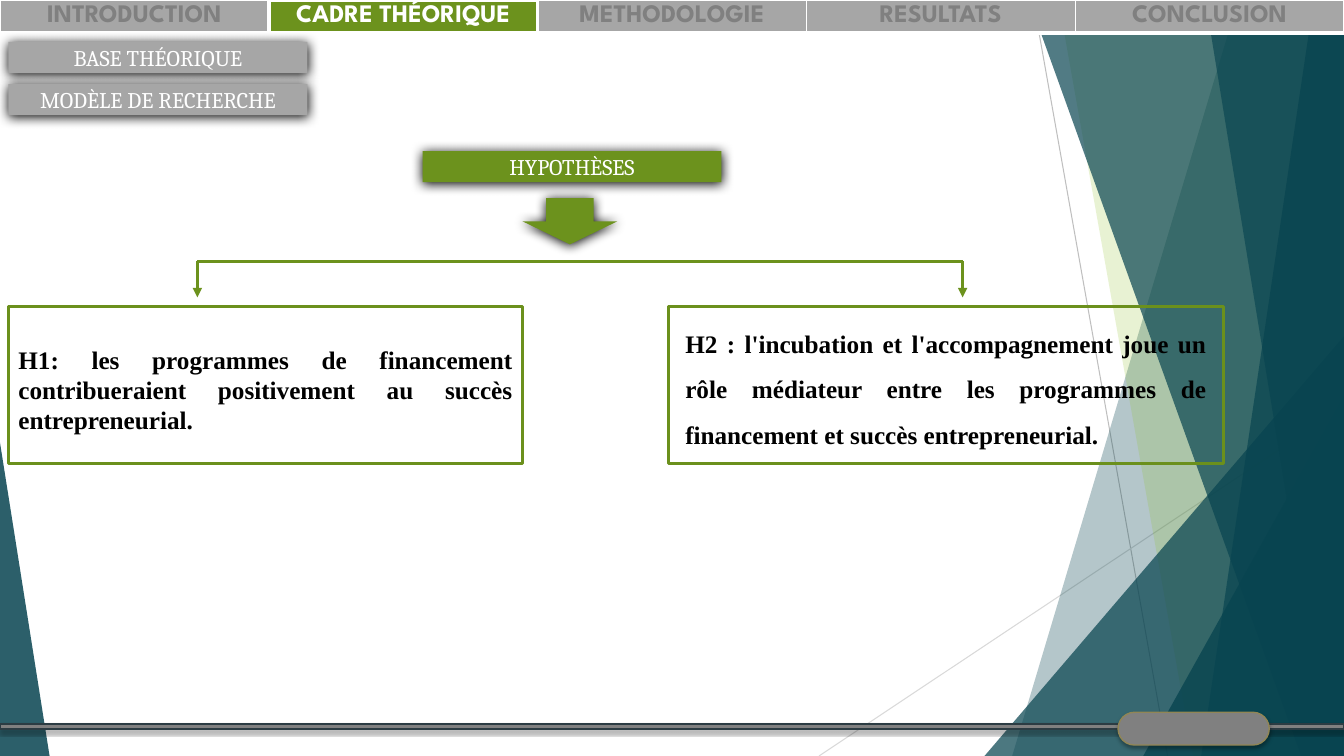
from lxml import etree
from pptx import Presentation, util as u
from pptx.dml.color import RGBColor
from pptx.enum import shapes, text
from pptx.oxml import ns

COLUMNS, ROWS = 160, 90
WIDTH, HEIGHT = u.Inches(13.33), u.Inches(7.5)
GREEN, FRAME_GREEN, GREY, DARK_GREY = "6C921D", "6B901C", "A6A6A6", "808080"
TEAL, WHITE, BLACK = "084450", "FFFFFF", "000000"
DEEP_SHADOW, SOFT_SHADOW = (100, 8.5, 1), (35, 3, 2)

HEADINGS = ["INTRODUCTION", "CADRE THÉORIQUE", "METHODOLOGIE", "RESULTATS", "CONCLUSION"]
ACTIVE_HEADING = 1
HEADING_FONT = {"name": "League Spartan", "size": u.Pt(18), "bold": True}
LABEL_FONT = {"name": "Cambria", "size": u.Pt(16), "bold": False}
HYPOTHESIS_FONT = {"name": "Times New Roman", "size": u.Pt(18), "bold": True}
CENTRED = {"alignment": text.PP_ALIGN.CENTER}
JUSTIFIED = {"alignment": text.PP_ALIGN.JUSTIFY}
SPACED = {**JUSTIFIED, "line_spacing": 1.5, "space_before": u.Pt(12), "space_after": u.Pt(12)}
LABELS = [
    ("BASE THÉORIQUE", 1, 5, GREY),
    ("MODÈLE DE RECHERCHE", 1, 10, GREY),
    ("HYPOTHÈSES", 50.3, 18, GREEN),
]
HYPOTHESES = [
    ("H1: les programmes de financement contribueraient positivement au succès entrepreneurial.",
     (1, 36.5, 61.2, 18.7), (1, 40.4, 61.2, 12.1), JUSTIFIED),
    ("H2 : l'incubation et l'accompagnement joue un rôle médiateur entre les programmes de "
     "financement et succès entrepreneurial.",
     (79.6, 36.5, 66.1, 18.7), (80.4, 36.7, 64.4, 17.5), SPACED),
]
BANDS_BEHIND = [(147.4, 120.5, TEAL, 30), (126, 142, "90C226", 20)]
BANDS_IN_FRONT = [(122.5, 154.9, TEAL, 70), (156.4, 143, TEAL, 70), (143.5, 158.2, TEAL, 65)]


def x(columns):
    return round(WIDTH * columns / COLUMNS)


def y(rows):
    return round(HEIGHT * rows / ROWS)


def box(left, top, width, height):
    return x(left), y(top), x(width), y(height)


def color(value):
    return RGBColor.from_string(value)


def assign(target, values):
    for name, value in values.items():
        setattr(target, name, value)


def child(parent, tag, **attributes):
    element = etree.SubElement(parent, ns.qn(tag))
    for name, value in attributes.items():
        element.set(name, str(value))
    return element


def paint(shape, fill=None, alpha=100, line=None, weight=1, shadow=None):
    shape.shadow.inherit = False
    if fill:
        shape.fill.solid()
        shape.fill.fore_color.rgb = color(fill)
        if alpha < 100:
            solid = shape.fill._xPr.find(ns.qn("a:solidFill"))
            child(solid[0], "a:alpha", val=alpha * 1000)
    else:
        shape.fill.background()
    if line:
        shape.line.color.rgb = color(line)
        shape.line.width = u.Pt(weight)
    else:
        shape.line.fill.background()
    if shadow:
        opacity, blur, distance = shadow
        effects = shape._element.spPr.find(ns.qn("a:effectLst"))
        outer = child(effects, "a:outerShdw", blurRad=u.Pt(blur), dist=u.Pt(distance),
                      dir=5400000, algn="ctr", rotWithShape=0)
        child(child(outer, "a:srgbClr", val=BLACK), "a:alpha", val=opacity * 1000)


def write(frame, words, font, font_color, paragraph_format):
    paragraph = frame.paragraphs[0]
    assign(paragraph, paragraph_format)
    run = paragraph.add_run()
    run.text = words
    assign(run.font, font)
    run.font.color.rgb = color(font_color)


def add_preset(slide, kind, area, adjustment=None, **style):
    shape = slide.shapes.add_shape(kind, *box(*area))
    if adjustment is not None:
        shape.adjustments[0] = adjustment
    paint(shape, **style)
    return shape


def add_triangle(slide, area, adjustment, alpha):
    add_preset(slide, shapes.MSO_SHAPE.ISOSCELES_TRIANGLE, area, adjustment, fill=TEAL, alpha=alpha)


def add_band(slide, top_left, bottom_left, fill, alpha):
    builder = slide.shapes.build_freeform(x(top_left), 0, scale=1.0)
    corners = [(COLUMNS, 0), (COLUMNS, ROWS), (bottom_left, ROWS)]
    builder.add_line_segments([(x(column), y(row)) for column, row in corners], close=True)
    paint(builder.convert_to_shape(), fill, alpha)


def add_line(slide, start, end, line_color, weight, arrow=False):
    (left, top), (right, bottom) = start, end
    connector = slide.shapes.add_connector(
        shapes.MSO_CONNECTOR.STRAIGHT, x(left), y(top), x(right), y(bottom))
    connector.line.color.rgb = color(line_color)
    connector.line.width = u.Pt(weight)
    properties = connector._element.spPr
    if arrow:
        child(properties.find(ns.qn("a:ln")), "a:tailEnd", type="triangle")
    child(properties, "a:effectLst")


def add_label(slide, words, left, top, fill):
    shape = add_preset(slide, shapes.MSO_SHAPE.RECTANGLE, (left, top, 35.6, 3.7),
                       fill=fill, shadow=DEEP_SHADOW)
    shape.text_frame.vertical_anchor = text.MSO_ANCHOR.MIDDLE
    write(shape.text_frame, words, LABEL_FONT, WHITE, CENTRED)


def add_hypothesis(slide, words, frame_area, text_area, paragraph_format):
    add_preset(slide, shapes.MSO_SHAPE.RECTANGLE, frame_area, line=FRAME_GREEN, weight=2.25)
    frame = slide.shapes.add_textbox(*box(*text_area)).text_frame
    frame.word_wrap = True
    write(frame, words, HYPOTHESIS_FONT, BLACK, paragraph_format)


def set_borders(cell, weights):
    properties = cell._tc.get_or_add_tcPr()
    for position, (side, weight) in enumerate(weights.items()):
        border = etree.Element(ns.qn(f"a:ln{side}"), w=str(u.Pt(weight)))
        child(child(border, "a:solidFill"), "a:srgbClr", val=WHITE)
        properties.insert(position, border)


def add_navigation(slide):
    table = slide.shapes.add_table(1, len(HEADINGS), 0, 0, WIDTH, u.Inches(0.23)).table
    assign(table, {"first_row": False, "horz_banding": False})
    for index, heading in enumerate(HEADINGS):
        active = index == ACTIVE_HEADING
        cell = table.cell(0, index)
        cell.fill.solid()
        cell.fill.fore_color.rgb = color(GREEN if active else GREY)
        write(cell.text_frame, heading, HEADING_FONT, WHITE if active else DARK_GREY, CENTRED)
        set_borders(cell, {
            "L": 3 if index in (ACTIVE_HEADING, ACTIVE_HEADING + 1) else 1,
            "R": 3 if index in (ACTIVE_HEADING - 1, ACTIVE_HEADING) else 1,
            "T": 3 if active else 1,
            "B": 3,
        })


def add_background(slide):
    add_line(slide, (123, 0), (139, ROWS), "BFBFBF", 0.75)
    add_line(slide, (COLUMNS, 48.4), (97.5, ROWS), "D9D9D9", 0.75)
    for band in BANDS_BEHIND:
        add_band(slide, *band)
    add_triangle(slide, (117.2, 40, 42.8, 50), 1, 72)
    for band in BANDS_IN_FRONT:
        add_band(slide, *band)
    add_triangle(slide, (136.1, 47.2, 23.9, 42.8), 1, 80)
    add_triangle(slide, (0, 52.7, 5.9, 37.3), 0, 85)


def add_footer(slide):
    add_preset(slide, shapes.MSO_SHAPE.RECTANGLE, (0, 86.2, COLUMNS, 0.6),
               fill=DARK_GREY, line="2C3C43", shadow=SOFT_SHADOW)
    add_preset(slide, shapes.MSO_SHAPE.ROUNDED_RECTANGLE, (133.1, 84.8, 18, 3.9), 0.5,
               fill=DARK_GREY, line="918655", shadow=SOFT_SHADOW)


def add_branches(slide):
    left, right, top, bottom = 23.5, 114.6, 31.1, 35.4
    add_preset(slide, shapes.MSO_SHAPE.DOWN_ARROW, (62.2, 23.6, 11.3, 5.5),
               fill=GREEN, shadow=DEEP_SHADOW)
    add_line(slide, (left, top), (right, top), GREEN, 2.25)
    for column in (left, right):
        add_line(slide, (column, top), (column, bottom), GREEN, 2.25, arrow=True)


def main():
    presentation = Presentation()
    assign(presentation, {"slide_width": WIDTH, "slide_height": HEIGHT})
    slide = presentation.slides.add_slide(presentation.slide_layouts[6])
    add_background(slide)
    add_navigation(slide)
    for label in LABELS:
        add_label(slide, *label)
    add_footer(slide)
    add_branches(slide)
    for hypothesis in HYPOTHESES:
        add_hypothesis(slide, *hypothesis)
    presentation.save("out.pptx")


if __name__ == "__main__":
    main()
